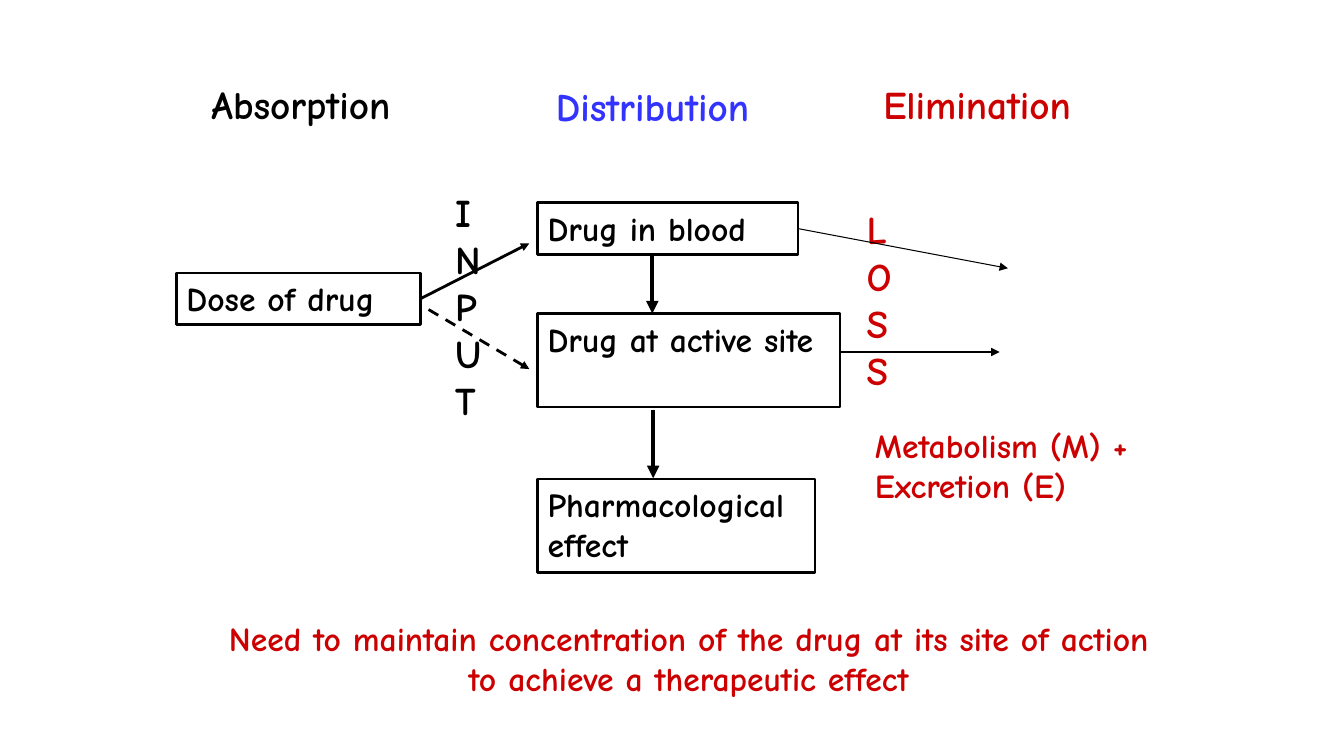
from lxml.etree import SubElement
from pptx import Presentation
from pptx.dml.color import RGBColor
from pptx.enum.dml import MSO_LINE
from pptx.enum.shapes import MSO_CONNECTOR, MSO_SHAPE
from pptx.enum.text import MSO_ANCHOR, MSO_AUTO_SIZE, PP_ALIGN
from pptx.oxml.ns import qn
from pptx.util import Cm, Pt

BLACK, BLUE, RED = "000000", "3333FF", "CC0000"
RIGHT_SIDE = 3


def color(value):
    return RGBColor.from_string(value)


class DiagramSlide:
    font_name = "Comic Neue"
    heading_size = 28
    body_size = 24

    def __init__(self, presentation):
        self.slide = presentation.slides.add_slide(presentation.slide_layouts[6])

    def fill_text(self, shape, lines, size, text_color, alignment=PP_ALIGN.LEFT):
        frame = shape.text_frame
        frame.word_wrap = True
        frame.auto_size = MSO_AUTO_SIZE.SHAPE_TO_FIT_TEXT
        frame.vertical_anchor = MSO_ANCHOR.TOP
        for index, line in enumerate(lines):
            paragraph = frame.add_paragraph() if index else frame.paragraphs[0]
            paragraph.alignment = alignment
            run = paragraph.add_run()
            run.text = line
            run.font.name = self.font_name
            run.font.size = Pt(size)
            run.font.bold = True
            run.font.color.rgb = color(text_color)

    def text(self, position, lines, size, text_color, alignment=PP_ALIGN.LEFT):
        shape = self.slide.shapes.add_textbox(*map(Cm, position))
        self.fill_text(shape, lines, size, text_color, alignment)

    def box(self, position, label):
        shape = self.slide.shapes.add_shape(MSO_SHAPE.RECTANGLE, *map(Cm, position))
        shape.shadow.inherit = False
        shape.fill.background()
        shape.line.color.rgb = color(BLACK)
        shape.line.width = Pt(2)
        self.fill_text(shape, [label], self.body_size, BLACK)
        return shape

    def arrow(self, start, end, width=2, dashed=False, source=None):
        connector = self.slide.shapes.add_connector(
            MSO_CONNECTOR.STRAIGHT, *map(Cm, start + end))
        if source is not None:
            connector.begin_connect(source, RIGHT_SIDE)
        connector.line.color.rgb = color(BLACK)
        connector.line.width = Pt(width)
        if dashed:
            connector.line.dash_style = MSO_LINE.DASH
        properties = connector._element.spPr
        SubElement(properties.get_or_add_ln(), qn("a:tailEnd"), type="triangle")
        SubElement(properties, qn("a:effectLst"))


def main():
    presentation = Presentation()
    presentation.slide_width = Cm(33.87)
    presentation.slide_height = Cm(19.05)
    diagram = DiagramSlide(presentation)

    for position, heading, heading_color in [
        ((5.08, 1.91, 5.93, 1.45), "Absorption", BLACK),
        ((13.76, 1.96, 6.14, 1.45), "Distribution", BLUE),
        ((22.01, 1.91, 6.14, 1.45), "Elimination", RED),
    ]:
        diagram.text(position, [heading], diagram.heading_size, heading_color)

    dose = diagram.box((4.45, 6.88, 6.14, 1.3), "Dose of drug")
    blood = diagram.box((13.55, 5.11, 6.56, 1.3), "Drug in blood")
    diagram.box((13.55, 7.9, 7.62, 2.36), "Drug at active site")
    diagram.box((13.55, 12.07, 6.99, 2.36), "Pharmacological effect")

    diagram.text((11.22, 4.62, 1.06, 6.2), "INPUT", diagram.heading_size, BLACK)
    diagram.text((21.59, 5.05, 1.27, 6.2), "LOSS", diagram.heading_size, RED)

    diagram.arrow((10.59, 7.53), (13.34, 6.13), source=dose)
    diagram.arrow((10.8, 7.8), (13.34, 9.3), dashed=True)
    diagram.arrow((20.11, 5.76), (25.4, 6.76), width=0.75, source=blood)
    diagram.arrow((21.17, 8.87), (25.19, 8.87))
    diagram.arrow((16.44, 6.42), (16.44, 7.9), width=3)
    diagram.arrow((16.46, 10.34), (16.46, 12.05), width=3)

    diagram.text((21.8, 10.57, 8.26, 2.31), ["Metabolism (M) + Excretion (E)"],
                 diagram.body_size, RED)
    diagram.text((5.29, 15.45, 24.13, 2.31),
                 ["Need to maintain concentration of the drug at its site of action "
                  "to achieve a therapeutic effect"],
                 diagram.body_size, RED, PP_ALIGN.CENTER)
    presentation.save("out.pptx")


if __name__ == "__main__":
    main()
